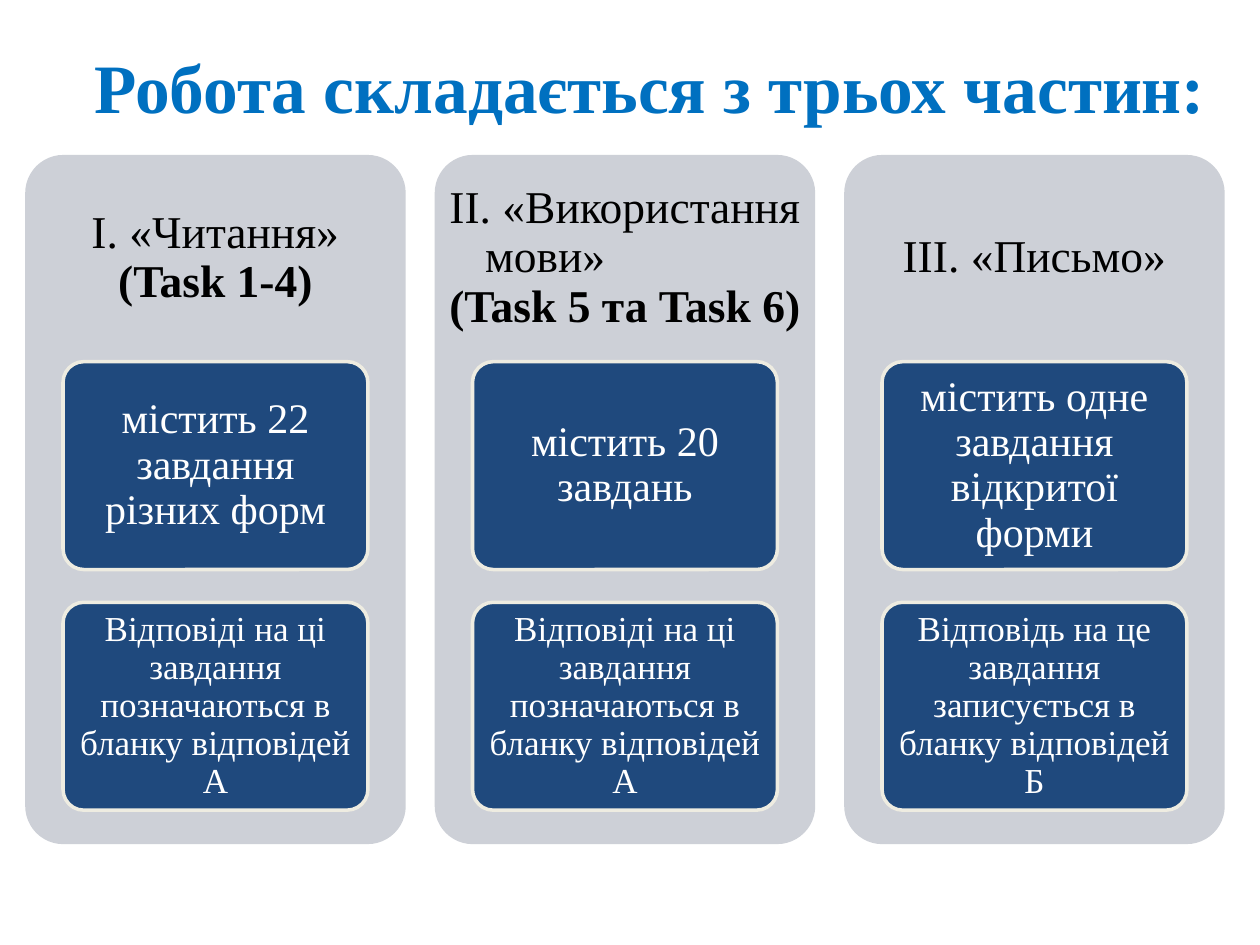
from dataclasses import dataclass

from pptx import Presentation
from pptx.dml.color import RGBColor
from pptx.enum.shapes import MSO_SHAPE
from pptx.enum.text import MSO_ANCHOR, PP_ALIGN
from pptx.util import Inches, Pt

ROUND = MSO_SHAPE.ROUNDED_RECTANGLE
MIDDLE = MSO_ANCHOR.MIDDLE
LEFT, CENTER = PP_ALIGN.LEFT, PP_ALIGN.CENTER


@dataclass(frozen=True)
class Theme:
    """Colours, font and type sizes of the slide."""
    font: str = "Times New Roman"
    title: str = "0070C0"
    panel: str = "CDD0D7"
    card: str = "1F497D"
    edge: str = "EEECE1"
    dark: str = "000000"
    light: str = "FFFFFF"
    title_size: float = 39.6
    head_size: float = 26
    task_size: float = 24
    note_size: float = 20


THEME = Theme()
TITLE = "Робота складається з трьох частин:"
PARTS = [
    ([("І. «Читання»", {}), ("(Task 1-4)", {"bold": True})],
     "містить 22 завдання різних форм",
     "Відповіді на ці завдання позначаються в бланку відповідей А"),
    ([("ІІ. «Використання", {}),
      ("мови»", {"align": LEFT, "indent": 0.29}),
      ("(Task 5 та Task 6)", {"bold": True})],
     "містить 20 завдань",
     "Відповіді на ці завдання позначаються в бланку відповідей А"),
    ([("ІІІ. «Письмо»", {})],
     "містить одне завдання відкритої форми",
     "Відповідь на це завдання записується в бланку відповідей Б"),
]
PANEL_LEFT, PANEL_TOP, PANEL_WIDE, PANEL_HIGH = 0.2, 1.23, 3.02, 5.47
STEP, HEAD_HIGH = 3.25, 1.64
CARD_IN, CARD_WIDE, CARD_HIGH = 0.3, 2.42, 1.65
TASK_TOP, NOTE_TOP = 2.87, 4.78


def write(para, text, *, size, color, bold=False, align=CENTER, indent=0, space=0.9):
    """Fill a paragraph with one formatted run."""
    para.alignment = align
    para.line_spacing = space
    if indent:
        para._p.get_or_add_pPr().set("marL", str(Inches(indent)))
    run = para.add_run()
    run.text = text
    run.font.name = THEME.font
    run.font.size = Pt(size)
    run.font.bold = bold
    run.font.color.rgb = RGBColor.from_string(color)


def set_frame(shape, side, edge):
    """Wrap and centre a shape's text and return its frame."""
    frame = shape.text_frame
    frame.word_wrap = True
    frame.vertical_anchor = MIDDLE
    frame.margin_left = frame.margin_right = Inches(side)
    frame.margin_top = frame.margin_bottom = Inches(edge)
    return frame


def add_round(slide, box, fill, line=None):
    """Add a flat rounded rectangle."""
    shape = slide.shapes.add_shape(ROUND, *map(Inches, box))
    shape.adjustments[0] = 0.1
    shape.shadow.inherit = False
    shape.fill.solid()
    shape.fill.fore_color.rgb = RGBColor.from_string(fill)
    if line:
        shape.line.color.rgb = RGBColor.from_string(line)
        shape.line.width = Pt(2)
    else:
        shape.line.fill.background()
    return shape


def add_title(slide):
    """Place and format the title."""
    shape = slide.shapes.title
    shape.left, shape.top = Inches(0.51), Inches(0.21)
    shape.width, shape.height = Inches(9.3), Inches(0.94)
    frame = set_frame(shape, 0.1, 0.05)
    write(frame.paragraphs[0], TITLE, size=THEME.title_size,
          color=THEME.title, bold=True, space=1.0)


def add_head(slide, left, lines):
    """Add the heading at the top of a panel."""
    box = left, PANEL_TOP, PANEL_WIDE, HEAD_HIGH
    frame = set_frame(slide.shapes.add_textbox(*map(Inches, box)), 0.11, 0.11)
    for num, (text, style) in enumerate(lines):
        para = frame.add_paragraph() if num else frame.paragraphs[0]
        write(para, text, size=THEME.head_size, color=THEME.dark, **style)


def add_card(slide, left, top, text, size, side, edge):
    """Add a dark card with its text."""
    box = left, top, CARD_WIDE, CARD_HIGH
    shape = add_round(slide, box, THEME.card, THEME.edge)
    frame = set_frame(shape, side, edge)
    write(frame.paragraphs[0], text, size=size, color=THEME.light)


def add_part(slide, left, lines, task, note):
    """Add one panel with its heading and two cards."""
    add_round(slide, (left, PANEL_TOP, PANEL_WIDE, PANEL_HIGH), THEME.panel)
    add_head(slide, left, lines)
    inner = left + CARD_IN
    add_card(slide, inner, TASK_TOP, task, THEME.task_size, 0.07, 0.05)
    add_card(slide, inner, NOTE_TOP, note, THEME.note_size, 0.06, 0.04)


def main():
    """Build and save the slide."""
    deck = Presentation()
    deck.slide_width, deck.slide_height = Inches(10), Inches(7.5)
    slide = deck.slides.add_slide(deck.slide_layouts[5])
    add_title(slide)
    for num, part in enumerate(PARTS):
        add_part(slide, PANEL_LEFT + num * STEP, *part)
    deck.save("out.pptx")


if __name__ == "__main__":
    main()
